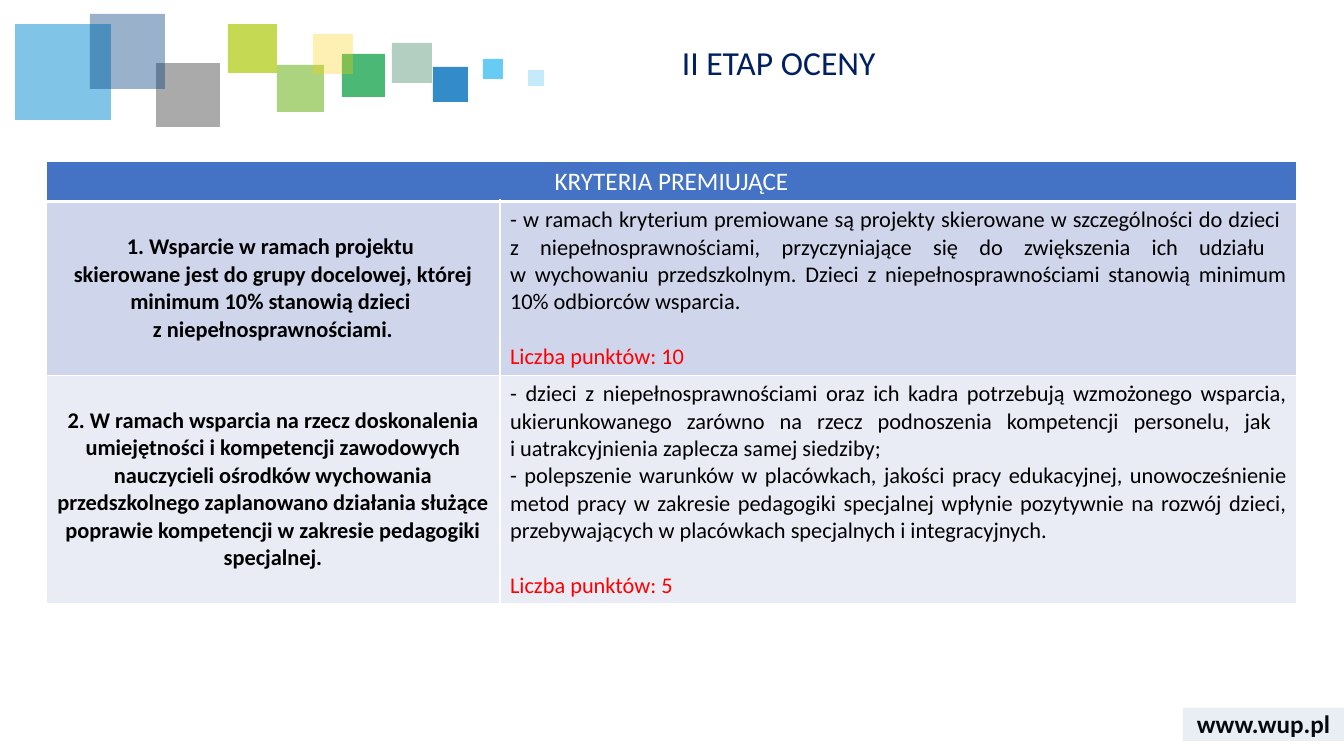
from lxml.etree import SubElement
from pptx import Presentation
from pptx.dml.color import RGBColor
from pptx.enum.shapes import MSO_SHAPE
from pptx.enum.text import MSO_ANCHOR, PP_ALIGN
from pptx.oxml.ns import qn
from pptx.util import Emu, Pt

PX = 914400 / 100.8
FONT = "Calibri"
BLACK = RGBColor(0x00, 0x00, 0x00)
WHITE = RGBColor(0xFF, 0xFF, 0xFF)
RED = RGBColor(0xFF, 0x00, 0x00)
NAVY = RGBColor(0x00, 0x20, 0x60)
HEADER_BLUE = RGBColor(0x44, 0x72, 0xC4)
BAND_DARK = RGBColor(0xCF, 0xD5, 0xEA)
BAND_LIGHT = RGBColor(0xE9, 0xEB, 0xF5)
FOOTER_BLUE = RGBColor(0x2F, 0x55, 0x97)
SAGE = RGBColor(0x00, 0x61, 0x38)
BLUE = RGBColor(0x00, 0x6E, 0xB9)
GREEN = RGBColor(0x00, 0x9A, 0x3C)
AZURE = RGBColor(0x02, 0x8B, 0xD3)
LEAF = RGBColor(0x75, 0xB8, 0x2A)
GREY = RGBColor(0x57, 0x57, 0x57)
INDIGO = RGBColor(0x00, 0x3D, 0x7C)
SKY = RGBColor(0x40, 0xC0, 0xF1)
LIME = RGBColor(0xAF, 0xCA, 0x0B)
YELLOW = RGBColor(0xFE, 0xD0, 0x00)

SQUARES = [
    (392, 43, 40, SAGE, 30),
    (433, 67, 35, BLUE, 80),
    (342, 54, 43, GREEN, 70),
    (15, 24, 96, AZURE, 50),
    (277, 65, 47, LEAF, 60),
    (156, 63, 64, GREY, 50),
    (90, 14, 75, INDIGO, 40),
    (483, 59, 20, SKY, 80),
    (228, 24, 49, LIME, 70),
    (313, 34, 40, YELLOW, 30),
    (528, 70, 16, SKY, 30),
]

CRITERIA = [
    (
        [
            "1. Wsparcie w ramach projektu ",
            "skierowane jest do grupy docelowej, której minimum 10% stanowią dzieci ",
            "z niepełnosprawnościami.",
        ],
        [
            "- w ramach kryterium premiowane są projekty skierowane w szczególności do dzieci \n"
            "z niepełnosprawnościami, przyczyniające się do zwiększenia ich udziału \n"
            "w wychowaniu przedszkolnym. Dzieci z niepełnosprawnościami stanowią minimum "
            "10% odbiorców wsparcia.",
        ],
        "Liczba punktów: 10",
        BAND_DARK,
    ),
    (
        [
            "2. W ramach wsparcia na rzecz doskonalenia umiejętności i kompetencji zawodowych "
            "nauczycieli ośrodków wychowania przedszkolnego zaplanowano działania służące "
            "poprawie kompetencji w zakresie pedagogiki specjalnej.",
        ],
        [
            "- dzieci z niepełnosprawnościami oraz ich kadra potrzebują wzmożonego wsparcia, "
            "ukierunkowanego zarówno na rzecz podnoszenia kompetencji personelu, jak \n"
            "i uatrakcyjnienia zaplecza samej siedziby;",
            "- polepszenie warunków w placówkach, jakości pracy edukacyjnej, unowocześnienie "
            "metod pracy w zakresie pedagogiki specjalnej wpłynie pozytywnie na rozwój dzieci, "
            "przebywających w placówkach specjalnych i integracyjnych. ",
        ],
        "Liczba punktów: 5",
        BAND_LIGHT,
    ),
]


def px(length):
    """Turn a length in pixels into EMU."""
    return Emu(round(length * PX))


def write(frame, text, size=16, color=BLACK, bold=False, align=PP_ALIGN.LEFT,
          before=None, spacing=None):
    """Put text into the frame's empty first paragraph or a new one."""
    first = frame.paragraphs[0]
    paragraph = frame.add_paragraph() if first.runs else first
    paragraph.text = text
    paragraph.alignment = align
    if before:
        paragraph.space_before = Pt(before)
    if spacing:
        paragraph.line_spacing = spacing
    for line_break in paragraph._p.findall(qn("a:br")):
        SubElement(line_break, qn("a:rPr"), sz=str(size * 100))
    for run in paragraph.runs:
        run.font.name = FONT
        run.font.size = Pt(size)
        run.font.bold = bold
        run.font.color.rgb = color


def add_label(slide, left, top, width, height, text, anchor=MSO_ANCHOR.TOP, **style):
    """Add a wrapped text box."""
    box = slide.shapes.add_textbox(px(left), px(top), px(width), px(height))
    frame = box.text_frame
    frame.word_wrap = True
    frame.vertical_anchor = anchor
    write(frame, text, **style)


def add_tint(slide, left, top, width, height, color, opacity):
    """Add a translucent rectangle without outline."""
    shape = slide.shapes.add_shape(
        MSO_SHAPE.RECTANGLE, px(left), px(top), px(width), px(height))
    shape.shadow.inherit = False
    shape.line.fill.background()
    shape.fill.solid()
    shape.fill.fore_color.rgb = color
    color_node = shape.fill._xPr.find(qn("a:solidFill"))[0]
    SubElement(color_node, qn("a:alpha"), val=str(opacity * 1000))


def style_cell(cell, color, anchor=MSO_ANCHOR.TOP, bottom=1):
    """Give a cell white borders, a fill and an anchor."""
    properties = cell._tc.get_or_add_tcPr()
    for side, points in (("L", 1), ("R", 1), ("T", 1), ("B", bottom)):
        border = SubElement(properties, qn(f"a:ln{side}"), w=str(Pt(points)))
        fill = SubElement(border, qn("a:solidFill"))
        SubElement(fill, qn("a:srgbClr"), val=str(WHITE))
    cell.fill.solid()
    cell.fill.fore_color.rgb = color
    cell.vertical_anchor = anchor


def add_criteria_table(slide):
    """Add the table of bonus criteria."""
    widths, heights = (454, 797), (40, 174, 228)
    table = slide.shapes.add_table(
        len(heights), len(widths), px(46), px(161), px(sum(widths)), px(sum(heights))).table
    for column, width in zip(table.columns, widths):
        column.width = px(width)
    for row, height in zip(table.rows, heights):
        row.height = px(height)
    header = table.cell(0, 0)
    header.merge(table.cell(0, 1))
    for cell in table.rows[0].cells:
        style_cell(cell, HEADER_BLUE, bottom=3)
    write(header.text_frame, "KRYTERIA PREMIUJĄCE", size=18, color=WHITE,
          align=PP_ALIGN.CENTER)
    for index, (criterion, details, points, band) in enumerate(CRITERIA, 1):
        name_cell, detail_cell = table.cell(index, 0), table.cell(index, 1)
        style_cell(name_cell, band, MSO_ANCHOR.MIDDLE)
        style_cell(detail_cell, band)
        for text in criterion:
            write(name_cell.text_frame, text, bold=True, align=PP_ALIGN.CENTER)
        for text in details:
            write(detail_cell.text_frame, text, align=PP_ALIGN.JUSTIFY)
        write(detail_cell.text_frame, points, color=RED, align=PP_ALIGN.JUSTIFY, before=19.5)


def main():
    """Build and save the slide."""
    presentation = Presentation()
    presentation.slide_width, presentation.slide_height = px(1344), px(756)
    slide = presentation.slides.add_slide(presentation.slide_layouts[6])
    add_label(slide, 1183, 703, 161, 40, "www.wup.pl", MSO_ANCHOR.MIDDLE,
              size=18, bold=True, align=PP_ALIGN.CENTER)
    for left, top, side, color, opacity in SQUARES:
        add_tint(slide, left, top, side, side, color, opacity)
    add_tint(slide, 1183, 708, 161, 33, FOOTER_BLUE, 10)
    add_criteria_table(slide)
    add_label(slide, 672, 42, 641, 55, "II ETAP OCENY", size=24, color=NAVY, spacing=0.9)
    presentation.save("out.pptx")


if __name__ == "__main__":
    main()
